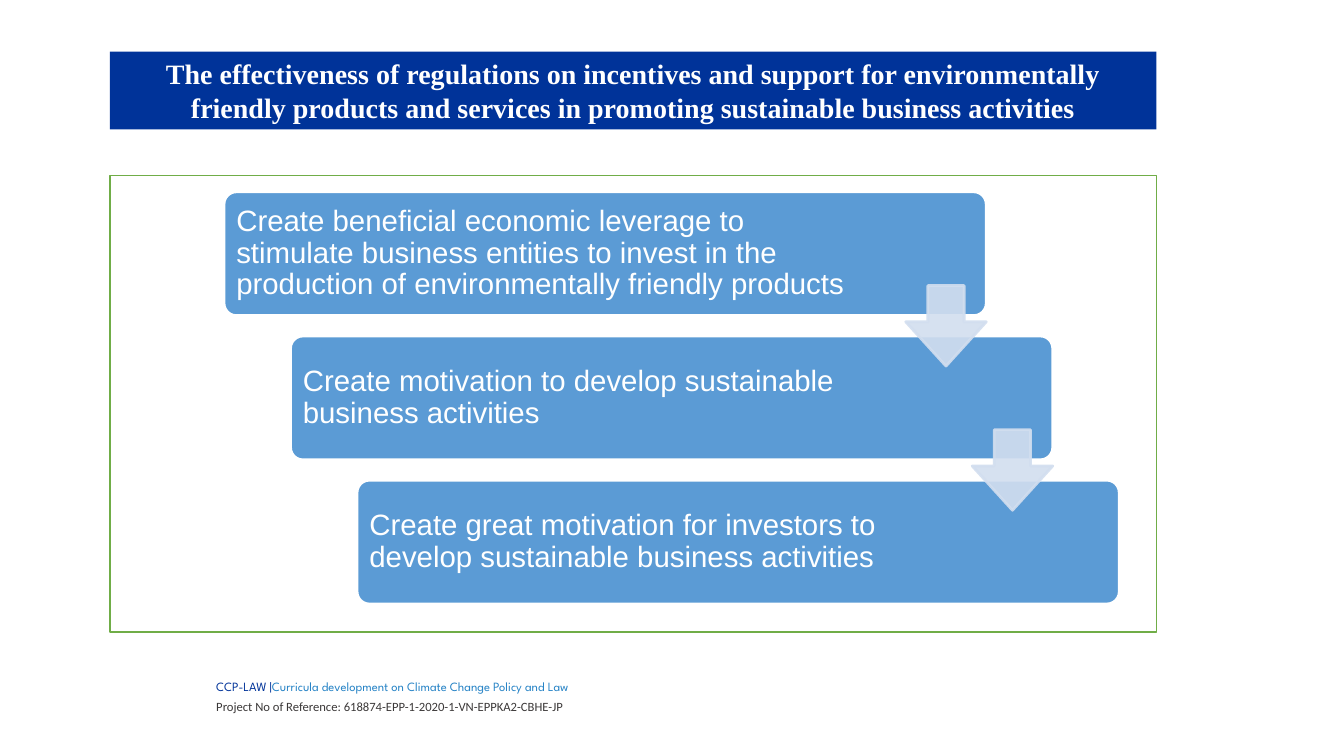
from lxml.etree import SubElement as Sub
from pptx import Presentation
from pptx.dml.color import RGBColor
from pptx.enum.shapes import MSO_SHAPE as Kind
from pptx.enum.text import MSO_ANCHOR as Anchor, PP_ALIGN as Align
from pptx.oxml.ns import qn
from pptx.util import Pt

TITLE = ("The effectiveness of regulations on incentives and support for "
         "environmentally friendly products and services in promoting "
         "sustainable business activities")
# Text and the width it wraps in
STEPS = [
    ("Create beneficial economic leverage to stimulate business entities to "
     "invest in the production of environmentally friendly products", 448.5),
    ("Create motivation to develop sustainable business activities", 433.5),
    ("Create great motivation for investors to develop sustainable "
     "business activities", 433.5),
]
# Each line is a list of runs: text, font, colour
FOOTER = [
    [("CCP-LAW |", "League Spartan", "003399"),
     ("Curricula development on Climate Change Policy and Law",
      "League Spartan", "2683C6")],
    [("Project No of Reference: 618874-EPP-1-2020-1-VN-EPPKA2-CBHE-JP",
      "Calibri", "3B3838")],
]
LEFT, WIDTH = 78.5, 747.5
STEP_X, STEP_Y, STEP_W, STEP_H = 160, 137, 544.5, 88.5
SHIFT_X, SHIFT_Y = 47.5, 103
ARROW = 57.5

deck = Presentation()
deck.slide_width, deck.slide_height = Pt(960), Pt(540)
slide = deck.slides.add_slide(deck.slide_layouts[6])


def paint(part, color):
    """Give a fill, line fill or font a solid colour."""
    if hasattr(part, "solid"):
        part.solid()
        part = part.fore_color
    else:
        part = part.color
    part.rgb = RGBColor.from_string(color)


def fade(fill_tag, share):
    """Set the opacity, in percent, of a solid fill element."""
    Sub(fill_tag[0], qn("a:alpha"), val=str(share * 1000))


def shape(kind, box, fill, line=None, weight=1, adj=(), alpha=None):
    item = slide.shapes.add_shape(kind, *map(Pt, box))
    item.shadow.inherit = False
    paint(item.fill, fill)
    if line:
        paint(item.line.fill, line)
        item.line.width = Pt(weight)
    else:
        item.line.fill.background()
    for i, value in enumerate(adj):
        item.adjustments[i] = value
    if alpha:
        for tag in item._element.spPr.iter(qn("a:solidFill")):
            fade(tag, alpha)
    return item


def write(frame, lines, size, bold=False, align=Align.LEFT, spacing=1.0,
          before=0, anchor=Anchor.MIDDLE, inset=(7.2, 3.6)):
    """Fill a text frame with lines made of (text, font, colour) runs."""
    frame.word_wrap = True
    frame.vertical_anchor = anchor
    frame.margin_left = frame.margin_right = Pt(inset[0])
    frame.margin_top = frame.margin_bottom = Pt(inset[1])
    for i, runs in enumerate(lines):
        para = frame.add_paragraph() if i else frame.paragraphs[0]
        para.alignment, para.line_spacing = align, spacing
        if i:
            para.space_before = Pt(before)
        for text, face, color in runs:
            run = para.add_run()
            run.text = text
            run.font.name, run.font.size, run.font.bold = face, Pt(size), bold
            paint(run.font, color)


# Footer
table = slide.shapes.add_table(1, 2, *map(Pt, (93.5, 480, 325.5, 37.5))).table
table.first_row = table.horz_banding = False
for col, width in zip(table.columns, (56, 269.5)):
    col.width = Pt(width)
for cell in table.rows[0].cells:
    cell.fill.background()
note = table.cell(0, 1)
write(note.text_frame, FOOTER, 9, spacing=1.07, before=3)
note.vertical_anchor = Anchor.MIDDLE
note.margin_left = note.margin_right = Pt(5)
note.margin_top = note.margin_bottom = 0

# Title and frame
bar = shape(Kind.RECTANGLE, (LEFT, 37, WIDTH, 55.5), "003399")
write(bar.text_frame, [[(TITLE, "Times New Roman", "FFFFFF")]], 20,
      bold=True, align=Align.CENTER, anchor=Anchor.TOP)
shape(Kind.RECTANGLE, (LEFT, 125.5, WIDTH, 326), "FFFFFF", "70AD47")

# Staircase of steps, then the arrows on top
spots = [(STEP_X + i * SHIFT_X, STEP_Y + i * SHIFT_Y)
         for i in range(len(STEPS))]
for (x, y), (text, width) in zip(spots, STEPS):
    shape(Kind.ROUNDED_RECTANGLE, (x, y, STEP_W, STEP_H), "5B9BD5",
          "FFFFFF", 2, adj=[0.1])
    label = slide.shapes.add_textbox(
        *map(Pt, (x + 2.5, y + 2.5, width, STEP_H - 5)))
    write(label.text_frame, [[(text, "Arial", "FFFFFF")]], 21, spacing=0.9,
          inset=(6.3, 6.3))
for x, y in spots[:-1]:
    shape(Kind.DOWN_ARROW, (x + STEP_W - ARROW, y + 67, ARROW, ARROW),
          "D2DEEF", "D2DEEF", 2, adj=[0.45, 0.55], alpha=90)

deck.save("out.pptx")
